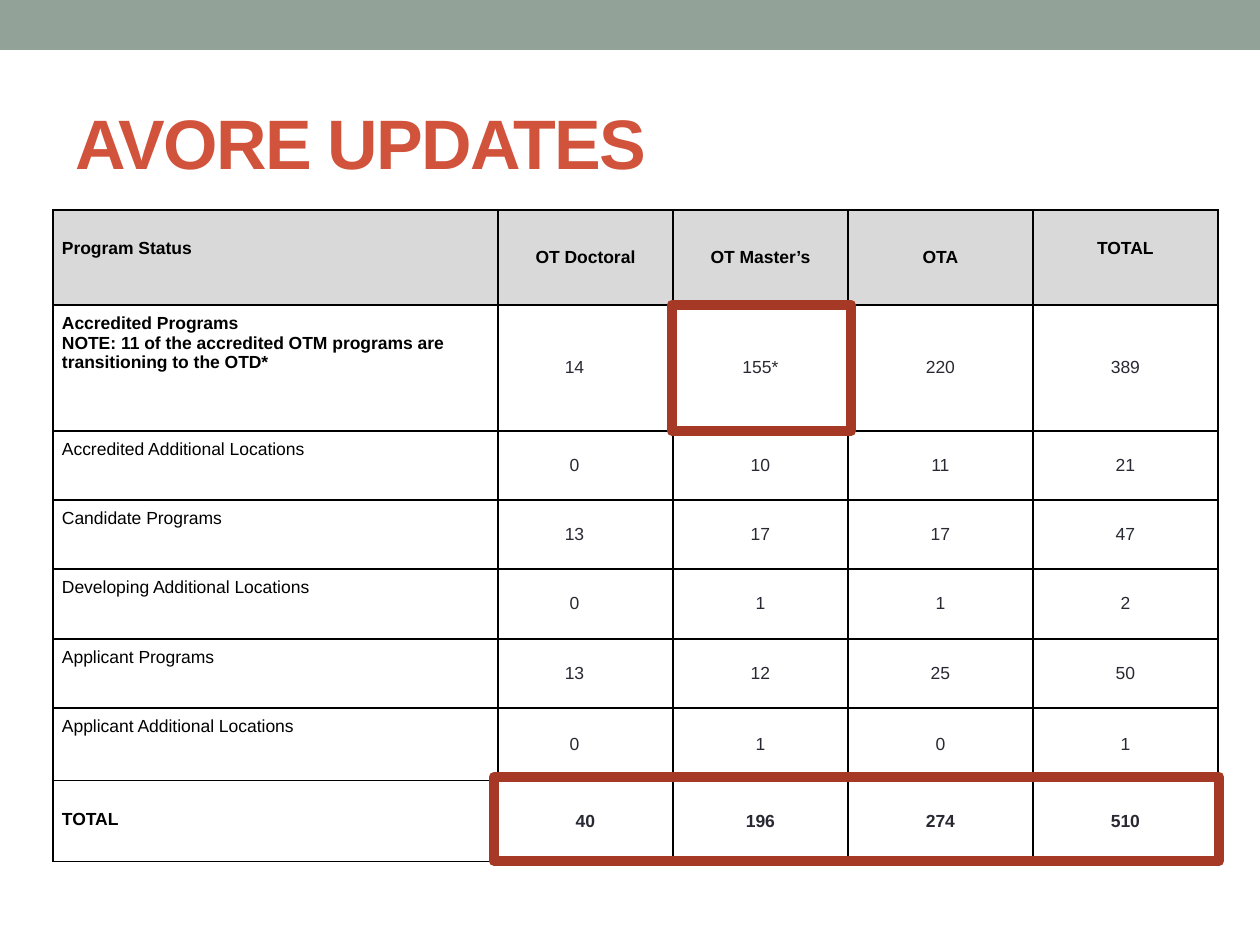
from dataclasses import dataclass

from lxml import etree
from pptx import Presentation
from pptx import util as u
from pptx.dml.color import RGBColor
from pptx.enum import shapes, text
from pptx.oxml.ns import qn


@dataclass(frozen=True)
class Theme:
    font: str = "Arial"
    title_size: int = 40
    cell_size: int = 10
    band: str = "93A299"
    title: str = "D2533C"
    header: str = "D9D9D9"
    label: str = "000000"
    value: str = "292934"
    border: str = "000000"
    highlight: str = "A53926"


THEME = Theme()
PX = 914400 // 126
TITLE = "AVORE UPDATES"
ROWS = [
    ["Program Status", "OT Doctoral", "OT Master’s", "OTA", "TOTAL"],
    ["Accredited Programs\nNOTE: 11 of the accredited OTM programs are transitioning to the OTD*",
     "14", "155*", "220", "389"],
    ["Accredited Additional Locations", "0", "10", "11", "21"],
    ["Candidate Programs", "13", "17", "17", "47"],
    ["Developing Additional Locations", "0", "1", "1", "2"],
    ["Applicant Programs", "13", "12", "25", "50"],
    ["Applicant Additional Locations", "0", "1", "0", "1"],
    ["TOTAL", "40", "196", "274", "510"],
]
COL_WIDTHS = [445, 175, 175, 185, 185]
ROW_HEIGHTS = [95, 126, 69, 69, 70, 69, 73, 81]
TABLE_LEFT, TABLE_TOP = 53, 210
INSET, LINE, DOCTORAL_SHIFT = 9, 20, 22
HIGHLIGHTS = [(672, 305, 179, 126), (494, 777, 725, 84)]


def px(*lengths):
    return [u.Emu(n * PX) for n in lengths]


def color(code):
    return RGBColor.from_string(code)


def add_run(p, content, size, code, bold):
    r = p.add_run()
    r.text = content
    r.font.name = THEME.font
    r.font.size = u.Pt(size)
    r.font.bold = bold
    r.font.color.rgb = color(code)
    return r


def add_rect(s, box, fill=None, line=None):
    sp = s.shapes.add_shape(shapes.MSO_SHAPE.RECTANGLE, *px(*box))
    sp.shadow.inherit = False
    if fill:
        sp.fill.solid()
        sp.fill.fore_color.rgb = color(fill)
    else:
        sp.fill.background()
    if line:
        sp.line.color.rgb = color(line)
        sp.line.width = u.Pt(6)
    else:
        sp.line.fill.background()


def add_title(s):
    tf = s.shapes.add_textbox(*px(63, 73, 1134, 136)).text_frame
    tf.word_wrap = True
    tf.vertical_anchor = text.MSO_ANCHOR.MIDDLE
    r = add_run(tf.paragraphs[0], TITLE, THEME.title_size, THEME.title, True)
    r._r.get_or_add_rPr().set("spc", "-100")


def set_borders(cell):
    tc_pr = cell._tc.get_or_add_tcPr()
    for side in ("a:lnL", "a:lnR", "a:lnT", "a:lnB"):
        ln = etree.SubElement(tc_pr, qn(side), w=str(u.Pt(1)))
        fill = etree.SubElement(ln, qn("a:solidFill"))
        etree.SubElement(fill, qn("a:srgbClr"), val=THEME.border)


def fill_cell(cell, row, col, content):
    last_row, last_col = len(ROWS) - 1, len(COL_WIDTHS) - 1
    is_header, is_label = row == 0, col == 0
    lowered = (row, col) in {(0, 0), (0, last_col), (last_row, 0)}
    shifted = col == 1 and 0 < row < last_row
    cell.margin_left, cell.margin_right, cell.margin_top, cell.margin_bottom = px(
        INSET, INSET + DOCTORAL_SHIFT * shifted, INSET + LINE * lowered, INSET)
    top = is_label or lowered
    cell.vertical_anchor = text.MSO_ANCHOR.TOP if top else text.MSO_ANCHOR.MIDDLE
    set_borders(cell)
    if is_header:
        cell.fill.solid()
        cell.fill.fore_color.rgb = color(THEME.header)
    else:
        cell.fill.background()
    p = cell.text_frame.paragraphs[0]
    p.alignment = text.PP_ALIGN.LEFT if is_label else text.PP_ALIGN.CENTER
    code = THEME.label if is_header or is_label else THEME.value
    bold = row in (0, last_row) or (row, col) == (1, 0)
    for i, part in enumerate(content.split("\n")):
        if i:
            p.add_line_break()
        add_run(p, part, THEME.cell_size, code, bold)


def add_status_table(s):
    box = px(TABLE_LEFT, TABLE_TOP, sum(COL_WIDTHS), sum(ROW_HEIGHTS))
    table = s.shapes.add_table(len(ROWS), len(COL_WIDTHS), *box).table
    table.first_row = table.horz_banding = False
    for column, width in zip(table.columns, px(*COL_WIDTHS)):
        column.width = width
    for line, height in zip(table.rows, px(*ROW_HEIGHTS)):
        line.height = height
    for row, values in enumerate(ROWS):
        for col, content in enumerate(values):
            fill_cell(table.cell(row, col), row, col, content)


def main():
    prs = Presentation()
    prs.slide_width, prs.slide_height = px(1260, 945)
    s = prs.slides.add_slide(prs.slide_layouts[6])
    add_rect(s, (0, 0, 1260, 50), fill=THEME.band)
    add_title(s)
    add_status_table(s)
    for box in HIGHLIGHTS:
        add_rect(s, box, line=THEME.highlight)
    prs.save("out.pptx")


if __name__ == "__main__":
    main()
